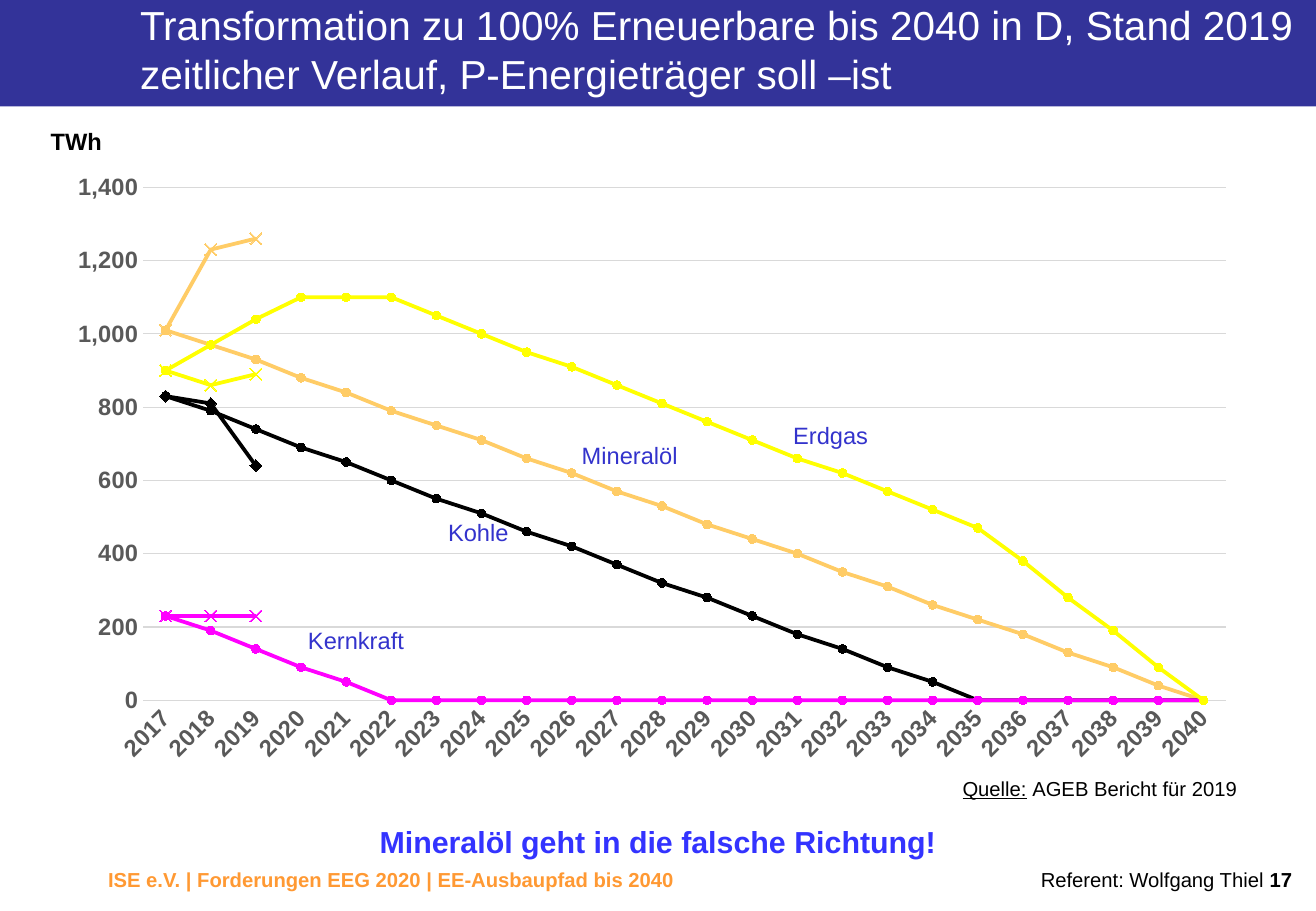
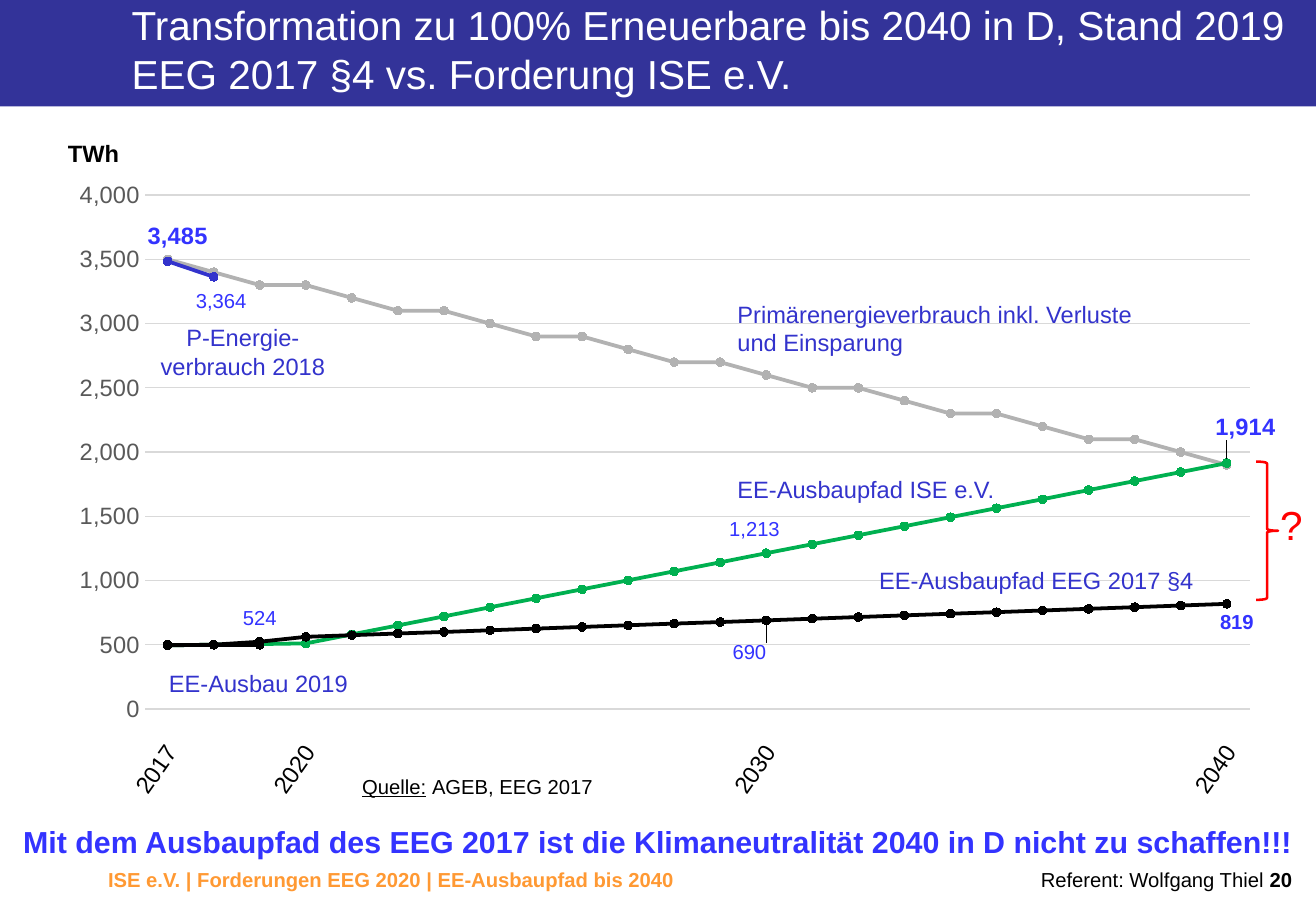
from dataclasses import dataclass

from lxml import etree
from pptx import Presentation
from pptx.chart.data import CategoryChartData
from pptx.dml.color import RGBColor
from pptx.enum import chart as ce
from pptx.enum import shapes as es
from pptx.enum import text as et
from pptx.util import Pt


@dataclass(frozen=True)
class Theme:
    font: str = "Arial"
    # colours
    band: str = "333399"
    white: str = "FFFFFF"
    black: str = "000000"
    label: str = "3333CC"
    claim: str = "3333FF"
    footer: str = "FF9933"
    alert: str = "FF0000"
    axis: str = "595959"
    grid: str = "D9D9D9"
    oil: str = "FFCC66"
    gas: str = "FFFF00"
    nuclear: str = "FF00FF"
    demand: str = "B2B2B2"
    renewable: str = "00B050"
    # type sizes
    title: int = 24
    message: int = 18
    body: int = 14
    small: int = 12


T = Theme()
W, H = 780, 540
YEARS = range(2017, 2041)
LEFT, CENTER, RIGHT = et.PP_ALIGN.LEFT, et.PP_ALIGN.CENTER, et.PP_ALIGN.RIGHT
LABEL = dict(size=T.body, color=T.label)
ABOVE, BELOW = ce.XL_LABEL_POSITION.ABOVE, ce.XL_LABEL_POSITION.BELOW
MARK = ce.XL_MARKER_STYLE
C_NS = "http://schemas.openxmlformats.org/drawingml/2006/chart"
C15_NS = "http://schemas.microsoft.com/office/drawing/2012/chart"
LEADER_LINES = (
    f'<c:extLst xmlns:c="{C_NS}"><c:ext uri="{{CE6537A1-D6FC-4f65-9D91-7224C49458BB}}" '
    f'xmlns:c15="{C15_NS}"><c15:showLeaderLines val="1"/></c:ext></c:extLst>')


def rgb(value):
    return RGBColor.from_string(value)


def pts(box):
    return [Pt(v) for v in box]


def style(font, size, color, **fmt):
    font.color.rgb = rgb(color)
    for key, value in {"name": T.font, "size": Pt(size), **fmt}.items():
        setattr(font, key, value)


def fill_text(tf, runs, inset=(7.2, 3.6), align=LEFT, wrap=False, spacing=None):
    """Write (text, format) runs into the first paragraph of a frame."""
    x, y = pts(inset)
    for key, value in dict(margin_left=x, margin_right=x, margin_top=y, margin_bottom=y,
                           word_wrap=wrap, auto_size=et.MSO_AUTO_SIZE.NONE,
                           vertical_anchor=et.MSO_ANCHOR.TOP).items():
        setattr(tf, key, value)
    p = tf.paragraphs[0]
    p.alignment, p.line_spacing = align, spacing
    for content, fmt in runs:
        for i, line in enumerate(content.split("\n")):
            if i:
                p.add_line_break()
            r = p.add_run()
            r.text = line
            style(r.font, **fmt)


def add_text(shapes, box, runs, **layout):
    sp = shapes.add_textbox(*pts(box))
    fill_text(sp.text_frame, runs, **layout)
    return sp


def base_slide(prs, title, title_left, message, number):
    """Slide with title band, bottom message and footer."""
    s = prs.slides.add_slide(prs.slide_layouts[5])
    band = s.shapes.add_shape(es.MSO_SHAPE.RECTANGLE, *pts((0, 0, W, 63)))
    band.shadow.inherit = False
    band.fill.solid()
    band.fill.fore_color.rgb = rgb(T.band)
    band.line.fill.background()
    s.shapes._spTree.insert(2, band._element)  # behind the title

    sp = s.shapes.title
    sp.left, sp.top, sp.width, sp.height = pts((title_left, 0, W - title_left, 58.3))
    fill_text(sp.text_frame, [(title, dict(size=T.title, color=T.white))],
              inset=(0, 0), wrap=True)
    add_text(s.shapes, (0, 483, W, 32),
             [(message, dict(size=T.message, color=T.claim, bold=True))],
             inset=(5, 5), align=CENTER, wrap=True)

    # footer
    small = dict(size=T.small, color=T.black)
    add_text(s.shapes, (57, 510.5, 520, 21.6),
             [("ISE e.V. | Forderungen EEG 2020 | EE-Ausbaupfad bis 2040",
               dict(size=T.small, color=T.footer, bold=True))], wrap=True)
    add_text(s.shapes, (576.5, 512, 196.5, 20),
             [("Referent: Wolfgang Thiel ", small), (number, {**small, "bold": True})],
             align=RIGHT, wrap=True, spacing=0.9)
    return s


def unit_and_source(s, unit_at, source_at, source):
    small = dict(size=T.small, color=T.black)
    add_text(s.shapes, (*unit_at, 45.4, 24.5),
             [("TWh", dict(size=T.body, color=T.black, bold=True))], align=CENTER)
    add_text(s.shapes, (*source_at, 165, 14.4),
             [("Quelle:", {**small, "underline": True}),
              (" ", {**small, "bold": True}), (source, small)], inset=(0, 0))


def curve_labels(s, labels):
    for content, box, align in labels:
        add_text(s.shapes, box, [(content, LABEL)], align=align)


def path_to(start, end, steps, unit=1):
    """Values on a straight line, rounded to the unit, without the start value."""
    return [int((start + (end - start) * i / steps) / unit + 0.5) * unit
            for i in range(1, steps + 1)]


def c_element(tag, parent=None, **attrs):
    name = f"{{{C_NS}}}{tag}"
    return etree.Element(name, attrs) if parent is None else etree.SubElement(parent, name, attrs)


def manual_layout(**parts):
    layout = c_element("layout")
    inner = c_element("manualLayout", layout)
    for tag, value in parts.items():
        c_element(tag, inner, val=str(value))
    return layout


def line_chart(s, box, plot, categories, series, top, step, bold):
    """Line chart from (name, values, colour, marker, marker size) rows."""
    data = CategoryChartData(number_format="#,##0")
    data.categories = [str(c) for c in categories]
    for name, values, *_ in series:
        data.add_series(name, values + [None] * (len(YEARS) - len(values)))
    chart = s.shapes.add_chart(ce.XL_CHART_TYPE.LINE_MARKERS, *pts(box), data).chart
    chart.has_legend = chart.has_title = False
    style(chart.font, 10, T.black)
    x, y, w, h = plot
    area = chart._chartSpace.chart.plotArea
    for old in area.findall(f"{{{C_NS}}}layout"):
        area.remove(old)
    area.insert(0, manual_layout(layoutTarget="inner", xMode="edge", yMode="edge",
                                 x=x, y=y, w=w, h=h))
    # axes
    for axis in (chart.category_axis, chart.value_axis):
        axis.major_tick_mark = axis.minor_tick_mark = ce.XL_TICK_MARK.NONE
        style(axis.tick_labels.font, T.body, T.axis, bold=bold)
    va = chart.value_axis
    va.minimum_scale, va.maximum_scale, va.major_unit = 0, top, step
    va.tick_labels.number_format = "#,##0"
    va.tick_labels.number_format_is_linked = False
    va.format.line.fill.background()
    for line in (va.major_gridlines.format.line, chart.category_axis.format.line):
        line.color.rgb = rgb(T.grid)
        line.width = Pt(0.75)
    # curves
    for ser, (_, _, color, marker, size) in zip(chart.plots[0].series, series):
        ser.smooth = False
        ser.format.line.color.rgb = rgb(color)
        ser.format.line.width = Pt(2.25)
        ser.marker.style, ser.marker.size = marker, size
        ser.marker.format.fill.solid()
        ser.marker.format.fill.fore_color.rgb = rgb(color)
        ser.marker.format.line.color.rgb = rgb(color)
    return chart


def value_labels(chart, box, labels):
    """Label single points, each moved by (dx, dy) from its normal place."""
    series = chart.plots[0].series
    for row, point, position, dx, dy, size, bold in labels:
        label = series[row].points[point].data_label
        style(label.font, size, T.claim, bold=bold)
        label.position = position
        dlbl = label._dLbl
        for old in dlbl.findall(f"{{{C_NS}}}layout"):
            dlbl.remove(old)
        dlbl.insert(1, manual_layout(x=round(dx / box[2], 4), y=round(dy / box[3], 4)))
    for row in {entry[0] for entry in labels}:
        group = series[row].data_labels
        group.show_value = False
        group._element.append(etree.fromstring(LEADER_LINES))


def carriers_slide(prs):
    s = base_slide(prs, "Transformation zu 100% Erneuerbare bis 2040 in D, Stand 2019\n"
                   "zeitlicher Verlauf, P-Energieträger soll –ist", 83,
                   "Mineralöl geht in die falsche Richtung!", "17")
    unit_and_source(s, (22.5, 71.6), (570.5, 460), "AGEB Bericht für 2019")
    gas = ([900, 970, 1040, 1100, 1100, 1100] + path_to(1098, 472, 13, 10)
           + path_to(472, 0, 5, 10))
    rows = [
        ("Mineralöl", T.oil, [1010] + path_to(1014, 0, 23, 10), [1010, 1230, 1260], MARK.X),
        ("Kohle", T.black, [830] + path_to(832, 0, 18, 10) + [0] * 5, [830, 810, 640],
         MARK.DIAMOND),
        ("Kernkraft", T.nuclear, [230] + path_to(232, 0, 5, 10) + [0] * 18, [230] * 3,
         MARK.X),
        ("Erdgas", T.gas, gas, [900, 860, 890], MARK.X),
    ]
    series = []
    for name, color, target, actual, marker in rows:
        series += [(f"{name} soll", target, color, MARK.CIRCLE, 5),
                   (f"{name} ist", actual, color, marker, 7)]
    chart = line_chart(s, (32.4, 95.8, 708.5, 362.9), (0.074, 0.042, 0.906, 0.838),
                       YEARS, series, 1400, 200, True)
    body = chart.category_axis.tick_labels.font._element.getparent().getparent().getparent()
    body[0].set("rot", "-2700000")  # slanted years
    curve_labels(s, [
        ("Erdgas", (463, 246, 59, 24.5), LEFT),
        ("Mineralöl", (337.7, 257.8, 71, 24.5), LEFT),
        ("Kohle", (258.5, 303.4, 50.4, 24.5), LEFT),
        ("Kernkraft", (175.5, 367.5, 72, 24.5), LEFT),
    ])


def gap_mark(s, x, y):
    """Brace with a question mark, grouped."""
    shapes = s.shapes.add_group_shape().shapes
    brace = shapes.add_shape(es.MSO_SHAPE.RIGHT_BRACE, *pts((x, y, 13, 82)))
    brace.shadow.inherit = False
    brace.fill.background()
    brace.line.color.rgb = rgb(T.alert)
    brace.line.width = Pt(1.5)
    add_text(shapes, (x + 7.2, y + 19.5, 23, 36), [("?", dict(size=T.title, color=T.alert))])


def expansion_slide(prs):
    s = base_slide(prs, "Transformation zu 100% Erneuerbare bis 2040 in D, Stand 2019\n"
                   "EEG 2017 §4 vs. Forderung ISE e.V.", 78,
                   "Mit dem Ausbaupfad des EEG 2017 ist die Klimaneutralität 2040 "
                   "in D nicht zu schaffen!!!", "20")
    unit_and_source(s, (32.8, 78.8), (214.7, 459), "AGEB, EEG 2017")
    box, plot = (36.7, 99.8, 720.7, 330.5), (0.068, 0.048, 0.909, 0.922)

    # years below the hidden axis
    step = box[2] * plot[2] / len(YEARS)
    for year in (2017, 2020, 2030, 2040):
        center = box[0] + box[2] * plot[0] + step * (year - YEARS[0] + 0.5) - 7
        sp = add_text(s.shapes, (center - 23, 443.5, 46, 24.5),
                      [(str(year), dict(size=T.body, color=T.black))])
        sp.rotation = 304.9

    rows = [
        ("Primärenergieverbrauch", [3500] + path_to(3485, 1914, 23, 100), T.demand),
        ("P-Energieverbrauch 2018", [3485, 3364], T.label),
        ("EE-Ausbaupfad ISE e.V.", [496, 501, 506, 511] + path_to(511, 1914, 20), T.renewable),
        ("EE-Ausbau 2019", [500] * 3, T.black),
        ("EE-Ausbaupfad EEG 2017 §4", [496, 501, 524, 562] + path_to(562, 818.6, 20), T.black),
    ]
    chart = line_chart(s, box, plot, range(1, 25), [(*row, MARK.CIRCLE, 5) for row in rows],
                       4000, 500, False)
    chart.category_axis.visible = False
    value_labels(chart, box, [
        (1, 0, ABOVE, 6, -1.5, T.body, True),
        (1, 1, BELOW, 4.5, 3, T.small, False),
        (2, 13, ABOVE, -7, -2.5, T.small, False),
        (2, 23, ABOVE, 11, -8, T.body, True),
        (4, 2, ABOVE, 0, -1.8, T.small, False),
        (4, 13, BELOW, -10, 7.5, T.small, False),
        (4, 23, BELOW, 6, -0.5, T.small, True),
    ])
    curve_labels(s, [
        ("Primärenergieverbrauch inkl. Verluste\nund Einsparung", (430, 174.2, 250, 41), LEFT),
        ("EE-Ausbaupfad ISE e.V.", (430, 278, 168, 24.5), LEFT),
        ("EE-Ausbaupfad EEG 2017 §4", (514, 332, 202, 24.5), LEFT),
        ("EE-Ausbau 2019", (93, 393, 121, 24.5), LEFT),
        ("P-Energie-\nverbrauch 2018", (88, 188, 112, 41), CENTER),
    ])
    gap_mark(s, 744.5, 273.6)


def main():
    prs = Presentation()
    prs.slide_width, prs.slide_height = Pt(W), Pt(H)
    carriers_slide(prs)
    expansion_slide(prs)
    prs.save("out.pptx")


if __name__ == "__main__":
    main()
